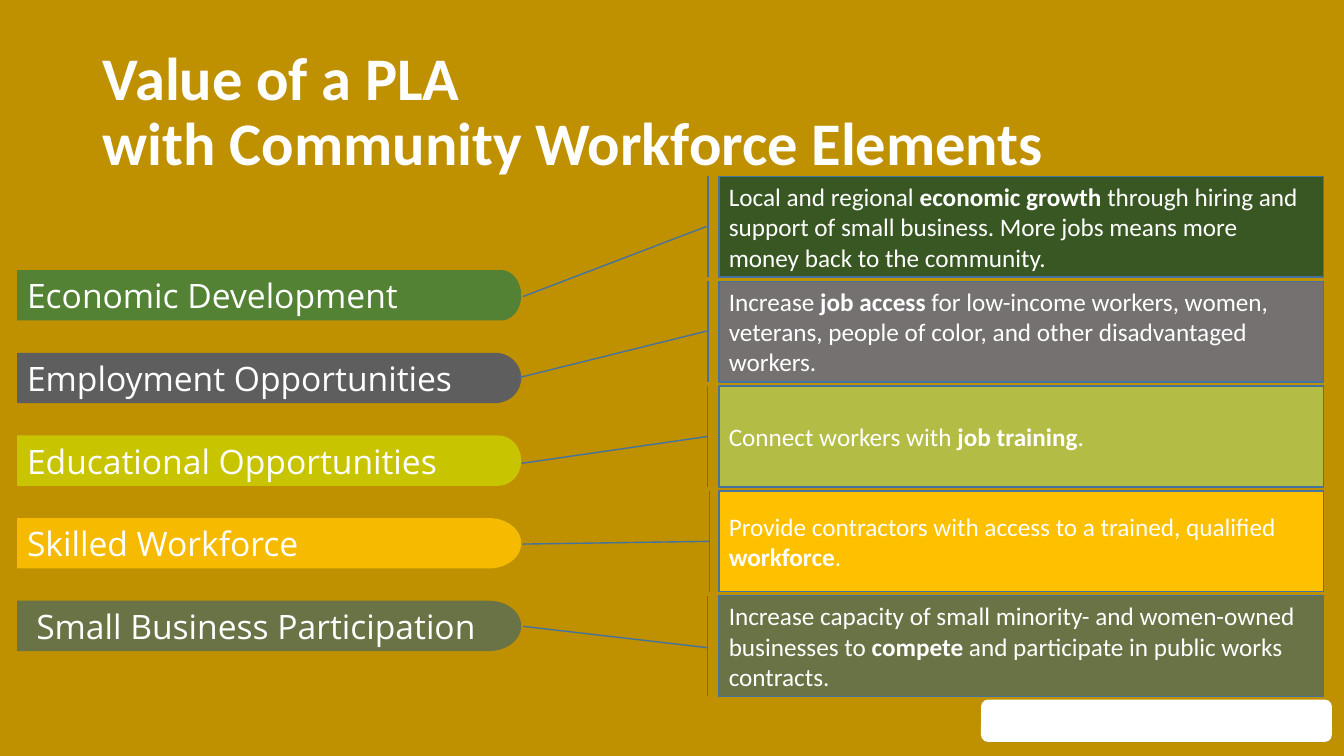
from math import cos, pi, sin

from pptx import Presentation
from pptx.dml.color import RGBColor
from pptx.enum.shapes import MSO_SHAPE
from pptx.enum.text import MSO_ANCHOR, MSO_AUTO_SIZE, PP_ALIGN
from pptx.util import Inches, Pt

ROUND = MSO_SHAPE.ROUNDED_RECTANGLE
CALLOUT = MSO_SHAPE.LINE_CALLOUT_1_BORDER_AND_ACCENT_BAR
LEFT = PP_ALIGN.LEFT
MIDDLE = MSO_ANCHOR.MIDDLE
NO_FIT = MSO_AUTO_SIZE.NONE

TITLE = "Value of a PLA\vwith Community Workforce Elements"

ROWS = [
    {"label": "Economic Development", "pill": "548235", "curve": 0.2, "inset": 0.1,
     "box": "385723", "adjust": (0.492, -0.018, 1.193, -0.324),
     "text": ("Local and regional ", "economic growth ",
              "through hiring and support of small business. "
              "More jobs means more money back to the community.")},
    {"label": "Employment Opportunities", "pill": "5E5E5E", "curve": 0.26, "inset": 0.1,
     "box": "767171", "adjust": (0.492, -0.018, 0.956, -0.33),
     "text": ("Increase ", "job access ",
              "for low-income workers, women, veterans, people of color, "
              "and other disadvantaged workers.")},
    {"label": "Educational Opportunities", "pill": "C9C400", "curve": 0.23, "inset": 0.1,
     "box": "B3BC44", "adjust": (0.501, -0.019, 0.767, -0.326),
     "text": ("Connect workers with ", "job training", ".")},
    {"label": "Skilled Workforce", "pill": "F6BB00", "curve": 0.32, "inset": 0.1,
     "box": "FFC000", "adjust": (0.501, -0.016, 0.528, -0.324),
     "text": ("Provide contractors with access to a trained, qualiﬁed ",
              "workforce", ".")},
    {"label": "Small Business Participation", "pill": "697345", "curve": 0.32, "inset": 0.19,
     "box": "697345", "adjust": (0.516, -0.019, 0.304, -0.324),
     "text": ("Increase capacity of small minority- and women-owned businesses to ",
              "compete", " and participate in public works contracts.")},
]

THEME = {
    "back": "BF9000",
    "white": "FFFFFF",
    "line": "43739E",
    "title": {"name": "Calibri", "size": Pt(43.2), "bold": True},
    "label": {"name": "Open Sans", "size": Pt(24), "bold": False},
    "body": {"name": "Calibri", "size": Pt(18), "bold": False},
}

PILL = {"left": 0.17, "top": 2.68, "width": 5, "height": 0.5, "step": 0.82}
BOX = {"left": 7.13, "top": 1.75, "width": 6, "height": 1, "step": 1.04}
ARC_STEPS = 24


def tint(name):
    return RGBColor.from_string(name)


def style(font, values):
    for key, value in values.items():
        setattr(font, key, value)
    font.color.rgb = tint(THEME["white"])


def paint(shape, fill, line=None):
    shape.shadow.inherit = False
    shape.fill.solid()
    shape.fill.fore_color.rgb = tint(fill)
    if line:
        shape.line.color.rgb = tint(line)
        shape.line.width = Pt(1)
    else:
        shape.line.fill.background()


def write(shape, parts, look, inset=0.1):
    frame = shape.text_frame
    frame.word_wrap = True
    frame.vertical_anchor = MIDDLE
    frame.margin_left = Inches(inset)
    para = frame.paragraphs[0]
    para.alignment = LEFT
    for index, part in enumerate(parts):
        run = para.add_run()
        run.text = part
        style(run.font, {**look, "bold": index == 1})


def add_pill(shapes, row, index):
    top = PILL["top"] + index * PILL["step"]
    half = PILL["height"] / 2
    hub = PILL["left"] + PILL["width"] - row["curve"]
    turns = [pi * step / ARC_STEPS - pi / 2 for step in range(ARC_STEPS + 1)]
    points = [(hub + row["curve"] * cos(turn), top + half + half * sin(turn))
              for turn in turns]
    points.append((PILL["left"], top + PILL["height"]))
    form = shapes.build_freeform(Inches(PILL["left"]), Inches(top))
    form.add_line_segments([(Inches(x), Inches(y)) for x, y in points])
    pill = form.convert_to_shape()
    paint(pill, row["pill"])
    write(pill, [row["label"]], THEME["label"], row["inset"])


def add_box(shapes, row, index):
    top = BOX["top"] + index * BOX["step"]
    box = shapes.add_shape(CALLOUT, Inches(BOX["left"]), Inches(top),
                           Inches(BOX["width"]), Inches(BOX["height"]))
    for spot, value in enumerate(row["adjust"]):
        box.adjustments[spot] = value
    paint(box, row["box"], THEME["line"])
    write(box, row["text"], THEME["body"])


def add_title(shapes):
    title = shapes.title
    title.left, title.top = Inches(0.92), Inches(0.4)
    title.width, title.height = Inches(11.5), Inches(1.45)
    frame = title.text_frame
    frame.text = TITLE
    frame.word_wrap = True
    frame.auto_size = NO_FIT
    frame.vertical_anchor = MIDDLE
    para = frame.paragraphs[0]
    para.alignment = LEFT
    para.line_spacing = 0.9
    for run in para.runs:
        style(run.font, THEME["title"])


def main():
    deck = Presentation()
    deck.slide_width, deck.slide_height = Inches(13.33), Inches(7.5)
    slide = deck.slides.add_slide(deck.slide_layouts[5])
    slide.background.fill.solid()
    slide.background.fill.fore_color.rgb = tint(THEME["back"])
    shapes = slide.shapes
    plate = shapes.add_shape(ROUND, Inches(9.73), Inches(6.94),
                             Inches(3.48), Inches(0.42))
    paint(plate, THEME["white"])
    for index, row in enumerate(ROWS):
        add_pill(shapes, row, index)
        add_box(shapes, row, index)
    add_title(shapes)
    deck.save("out.pptx")


if __name__ == "__main__":
    main()
